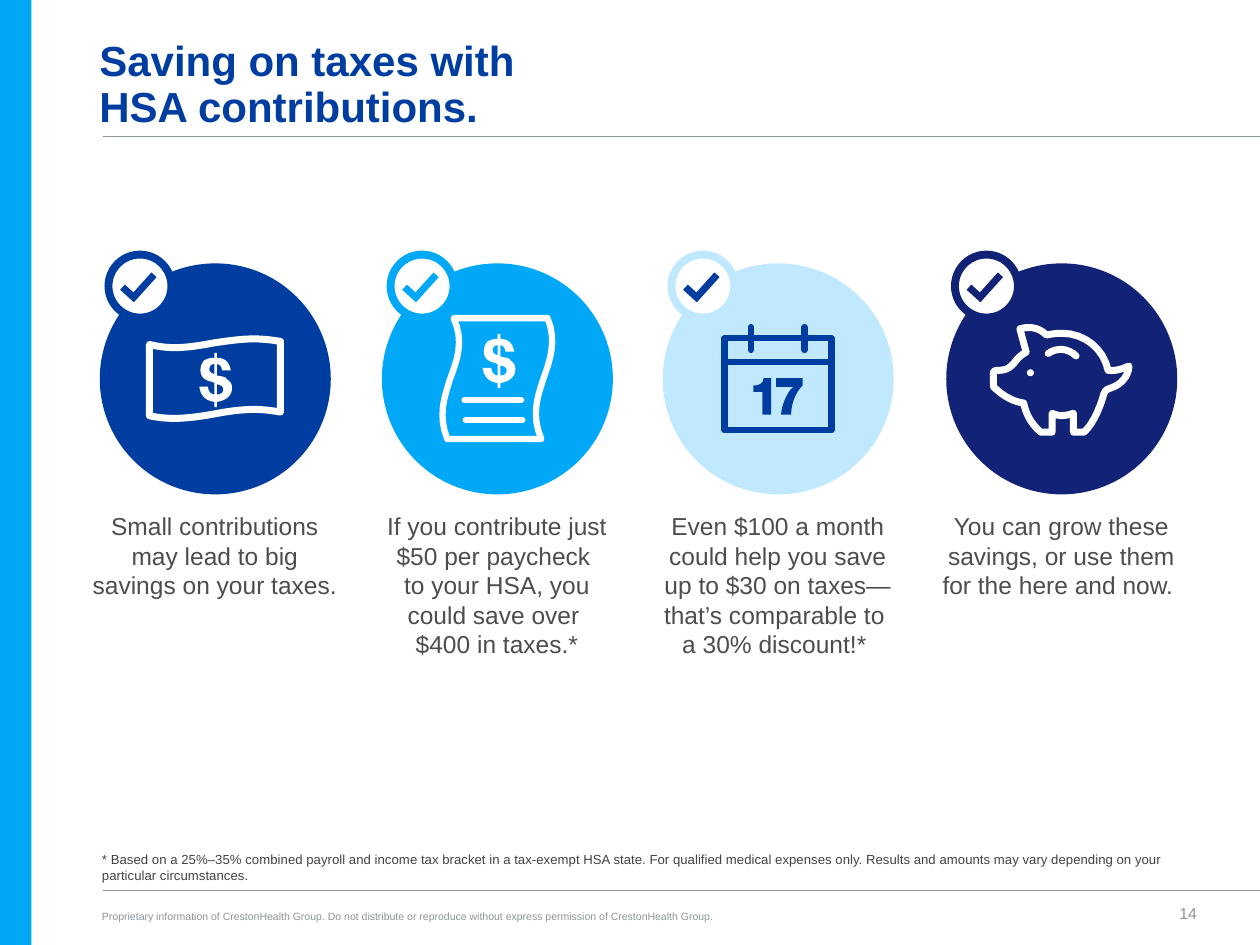
from dataclasses import dataclass

from lxml import etree
from pptx import Presentation
from pptx.dml.color import RGBColor
from pptx.enum.shapes import MSO_CONNECTOR, MSO_SHAPE
from pptx.enum.text import MSO_ANCHOR, PP_ALIGN
from pptx.oxml.ns import qn
from pptx.util import Pt

OVAL, RECT = MSO_SHAPE.OVAL, MSO_SHAPE.RECTANGLE
STRAIGHT = MSO_CONNECTOR.STRAIGHT
TOP, MIDDLE, BOTTOM = MSO_ANCHOR.TOP, MSO_ANCHOR.MIDDLE, MSO_ANCHOR.BOTTOM
LEFT, CENTER, RIGHT = PP_ALIGN.LEFT, PP_ALIGN.CENTER, PP_ALIGN.RIGHT


@dataclass(frozen=True)
class Theme:
    font: str = "Arial"
    blue: str = "003DA1"
    sky: str = "00A8F7"
    pale: str = "C0E9FF"
    navy: str = "122377"
    white: str = "FFFFFF"
    gray: str = "8C9599"
    body: str = "4D4D4D"
    note: str = "424242"
    title_size: float = 24
    body_size: float = 14
    number_size: float = 9
    note_size: float = 7.5
    legal_size: float = 6


T = Theme()

# Icon outlines, in points from the circle's corner: pairs are corners, sixes are curves
DOLLAR = [
    [(10.1, 23.8), (13, 23.8, 13.7, 22.3, 13.7, 20.9), (13.7, 19.4, 13, 18.7, 10.1, 18)],
    [(8.6, 6.5), (6.5, 6.5, 5.8, 7.9, 5.8, 9.4), (5.8, 10.8, 6.5, 11.5, 8.6, 12.2)],
    [(8.6, 17.3), (7.2, 16.6), (2.9, 15.8, 0.7, 13.7, 0.7, 10.1),
     (0.7, 7.9, 1.4, 5.8, 2.9, 4.3), (4.3, 3.6, 5.8, 2.9, 8.6, 2.9), (8.6, 0), (10.1, 0),
     (10.1, 2.9), (15.1, 2.9, 17.3, 5.8, 18, 10.1), (13, 10.1),
     (13, 7.9, 11.5, 6.5, 10.1, 6.5), (10.1, 13), (13.7, 13.7, 15.1, 13.7, 15.8, 15.1),
     (18, 16.6, 18.7, 18, 18.7, 20.2), (18.7, 22.3, 18, 23.8, 16.6, 25.2),
     (15.1, 26.6, 13.7, 27.4, 10.1, 28.1), (10.1, 31), (8.6, 31), (8.6, 28.1),
     (3.6, 27.4, 0.7, 24.5, 0, 19.4), (5, 19.4), (5, 21.6, 6.5, 23.8, 8.6, 23.8)],
]
BILL = [[(28.4, 46.4), (33.1, 47.5, 38.2, 48.2, 42.5, 48.2), (50.4, 48.2, 58.3, 46.8, 65.9, 45.4),
         (73.4, 44.3, 80.6, 43.2, 88.6, 43.2), (93.6, 43.2, 98.6, 43.9, 103.3, 44.6),
         (103.3, 85), (98.6, 84.2, 93.6, 83.5, 88.6, 83.5), (80.6, 83.5, 73.4, 84.6, 65.9, 86),
         (58.3, 87.4, 50.4, 88.6, 42.5, 88.6), (38.2, 88.6, 33.1, 88.2, 28.4, 87.1)]]
RECEIPT = [[(37.4, 100.4), (91.1, 100.4), (85.3, 86.4, 88.9, 76.3, 92.5, 65.5),
            (96.1, 55.1, 100.1, 44.3, 94.7, 31.3), (41, 31.3),
            (47.2, 44.6, 42.8, 55.8, 39.2, 65.5), (35.6, 76.7, 32, 86.8, 37.4, 100.4)]]
CALENDAR = [[(35.3, 42.8), (96.5, 42.8), (96.5, 95.4), (35.3, 95.4)]]
SEVENTEEN = [
    [(51.8, 69.8), (51.8, 73.4), (56.9, 73.4), (56.9, 86.4), (61.9, 86.4), (61.9, 65.5),
     (57.6, 65.5), (57.6, 68.4, 55.4, 69.8, 51.8, 69.8)],
    [(64.8, 70.6), (74.9, 70.6), (73.4, 71.3, 72, 73.4, 71.3, 74.9),
     (69.1, 78.5, 67.7, 83.5, 67.7, 86.4), (73.4, 86.4),
     (73.4, 80.6, 75.6, 74.2, 79.9, 69.8), (79.9, 65.5), (64.8, 65.5)],
]
PIG = [[(92.9, 61.2), (97.2, 61.6, 100.1, 60.5, 104.4, 58.7), (104.4, 63.4, 100.8, 69.1, 94, 71.3),
        (91.8, 72, 90.7, 72.7, 90, 74.9), (88.6, 79.9, 85, 90.7, 78.8, 96.5), (72.7, 96.5),
        (72.7, 85.7), (68.4, 87.1, 64.8, 87.8, 60.5, 85.7), (60.5, 96.5), (54, 96.5),
        (48.2, 91.4, 45.4, 85.7, 44.3, 79.9), (35.3, 78.5, 30.2, 73.4, 27, 70.6), (27, 62.6),
        (27, 61.6, 28.1, 61.2, 29.5, 61.2), (35.3, 61.2, 36.7, 59, 38.9, 56.9),
        (41, 54, 42.5, 52.6, 45.7, 50.8), (42.1, 37.4), (49.7, 35.3, 54.7, 38.2, 57.2, 41),
        (60.5, 40.3, 63.4, 40, 66.2, 40), (79.2, 40, 90, 49, 92.5, 61.2)]]
PIG_BACK = [[(58.3, 51.5), (63.4, 47.9, 69.8, 48.6, 74.2, 52.9)]]
CHECK = [[(13, 13.6), (19.4, 19.4), (31, 6.5)]]


def rgb(color):
    return RGBColor.from_string(color)


def paint(sp, fill=None, line=None, width=0, rounded=False):
    sp.shadow.inherit = False
    for part, color in ((sp.fill, fill), (sp.line.fill, line)):
        if color:
            part.solid()
            part.fore_color.rgb = rgb(color)
        else:
            part.background()
    if line:
        sp.line.width = Pt(width)
        ln = sp.line.fill._xPr
        ln.set("cap", "rnd" if rounded else "flat")
        join = etree.SubElement(ln, qn("a:round" if rounded else "a:miter"))
        if not rounded:
            join.set("lim", "800000")


def add_preset(s, kind, x, y, w, h, **style):
    paint(s.shapes.add_shape(kind, Pt(x), Pt(y), Pt(w), Pt(h)), **style)


def flatten(contour, steps=8):
    points = [contour[0]]
    for seg in contour[1:]:
        if len(seg) == 2:
            points.append(seg)
            continue
        (x0, y0), (x1, y1, x2, y2, x3, y3) = points[-1], seg
        for t in (i / steps for i in range(1, steps + 1)):
            a, b, c, d = (1 - t) ** 3, 3 * t * (1 - t) ** 2, 3 * t * t * (1 - t), t ** 3
            points.append((a * x0 + b * x1 + c * x2 + d * x3, a * y0 + b * y1 + c * y2 + d * y3))
    return points


def add_outline(s, x, y, contours, close=True, **style):
    builder = None
    for contour in contours:
        start, *rest = [(Pt(x + px), Pt(y + py)) for px, py in flatten(contour)]
        if builder is None:
            builder = s.shapes.build_freeform(*start)
        else:
            builder.move_to(*start)
        builder.add_line_segments(rest, close=close)
    paint(builder.convert_to_shape(), **style)


def add_line(s, x1, y1, x2, y2, color, width, rounded=False):
    cn = s.shapes.add_connector(STRAIGHT, Pt(x1), Pt(y1), Pt(x2), Pt(y2))
    cn.line.color.rgb = rgb(color)
    cn.line.width = Pt(width)
    if rounded:
        cn.line.fill._xPr.set("cap", "rnd")
    etree.SubElement(cn._element.spPr, qn("a:effectLst"))


def add_text(s, x, y, w, h, text, size, color, align=LEFT, anchor=TOP,
             inset=(7.2, 3.6, 7.2, 3.6), bold=False, spacing=None):
    tf = s.shapes.add_textbox(Pt(x), Pt(y), Pt(w), Pt(h)).text_frame
    tf.word_wrap = True
    tf.vertical_anchor = anchor
    tf.margin_left, tf.margin_top, tf.margin_right, tf.margin_bottom = map(Pt, inset)
    p = tf.paragraphs[0]
    p.text = text
    p.alignment = align
    p.line_spacing = spacing
    p.font.name, p.font.size, p.font.bold = T.font, Pt(size), bold
    p.font.color.rgb = rgb(color)


def bill_icon(s, x, y):
    add_outline(s, x, y, BILL, line=T.white, width=4, rounded=True)
    add_outline(s, x + 56.9, y + 51.1, DOLLAR, fill=T.white)


def receipt_icon(s, x, y):
    add_outline(s, x, y, RECEIPT, line=T.white, width=3.6, rounded=True)
    add_outline(s, x + 57.6, y + 40.3, DOLLAR, fill=T.white)
    for dx, dy in ((47.2, 78.1), (47.9, 89.6)):
        add_line(s, x + dx, y + dy, x + dx + 32.4, y + dy, T.white, 3.6, rounded=True)


def calendar_icon(s, x, y):
    add_outline(s, x, y, CALENDAR, line=T.blue, width=3.6, rounded=True)
    add_line(s, x + 35.3, y + 56.5, x + 96.5, y + 56.5, T.blue, 3.6)
    for dx in (50.4, 81):
        add_line(s, x + dx, y + 36.4, x + dx, y + 49.5, T.blue, 3.6, rounded=True)
    add_outline(s, x, y, SEVENTEEN, fill=T.blue)


def pig_icon(s, x, y):
    add_outline(s, x, y, PIG, line=T.white, width=4, rounded=True)
    add_outline(s, x, y, PIG_BACK, close=False, line=T.white, width=4, rounded=True)
    add_preset(s, OVAL, x + 46.1, y + 60.5, 4, 4, fill=T.white)


def benefit(s, x, y, color, check_color, icon, text):
    add_preset(s, OVAL, x, y, 132, 132, fill=color)
    add_preset(s, OVAL, x + 5, y - 5, 36, 36, fill=T.white, line=color, width=4.5)
    add_outline(s, x, y, CHECK, close=False, line=check_color, width=4)
    icon(s, x, y)
    add_text(s, x - 12.3, y + 138.2, 156.2, 92, text, T.body_size, T.body, CENTER)


def frame(s, w, h):
    add_preset(s, RECT, 0, 0, 18, h, fill=T.sky)
    for y in (78, 509):
        add_line(s, 59, y, w, y, T.gray, 0.5)
    add_text(s, 49.7, 18, 468, 62, "Saving on taxes with \vHSA contributions.",
             T.title_size, T.blue, anchor=MIDDLE, bold=True, spacing=0.9)


def footer(s, x, y):
    add_text(s, x, y, 635.8, 25.2,
             "* Based on a 25%–35% combined payroll and income tax bracket in a tax-exempt HSA state. "
             "For qualified medical expenses only. Results and amounts may vary depending on your "
             "particular circumstances.", T.note_size, T.note, anchor=BOTTOM, inset=(0, 3.6, 7.2, 3.6))
    add_text(s, x, y + 36.7, 460, 7.2,
             "Proprietary information of CrestonHealth Group. Do not distribute or reproduce "
             "without express permission of CrestonHealth Group.",
             T.legal_size, T.gray, anchor=BOTTOM, inset=(0, 0, 0, 0))
    add_text(s, x + 541.5, y + 31, 84.2, 13, "14", T.number_size, T.gray, RIGHT, BOTTOM, (0, 0, 0, 0))


BENEFITS = [
    (57, T.blue, T.blue, bill_icon, "Small contributions may lead to big savings on your taxes."),
    (218.2, T.sky, T.sky, receipt_icon, "If you contribute just $50 per paycheck \v"
     "to your HSA, you could save over \v$400 in taxes.*"),
    (378.7, T.pale, T.blue, calendar_icon, "Even $100 a month could help you save "
     "up to $30 on taxes—that’s comparable to \va 30% discount!* "),
    (540.7, T.navy, T.navy, pig_icon, "You can grow these savings, or use them for the here and now. "),
]


def main():
    prs = Presentation()
    prs.slide_width, prs.slide_height = Pt(720), Pt(540)
    s = prs.slides.add_slide(prs.slide_layouts[6])
    frame(s, 720, 540)
    for x, *details in BENEFITS:
        benefit(s, x, 150.5, *details)
    footer(s, 58.3, 483.1)
    prs.save("out.pptx")


if __name__ == "__main__":
    main()
